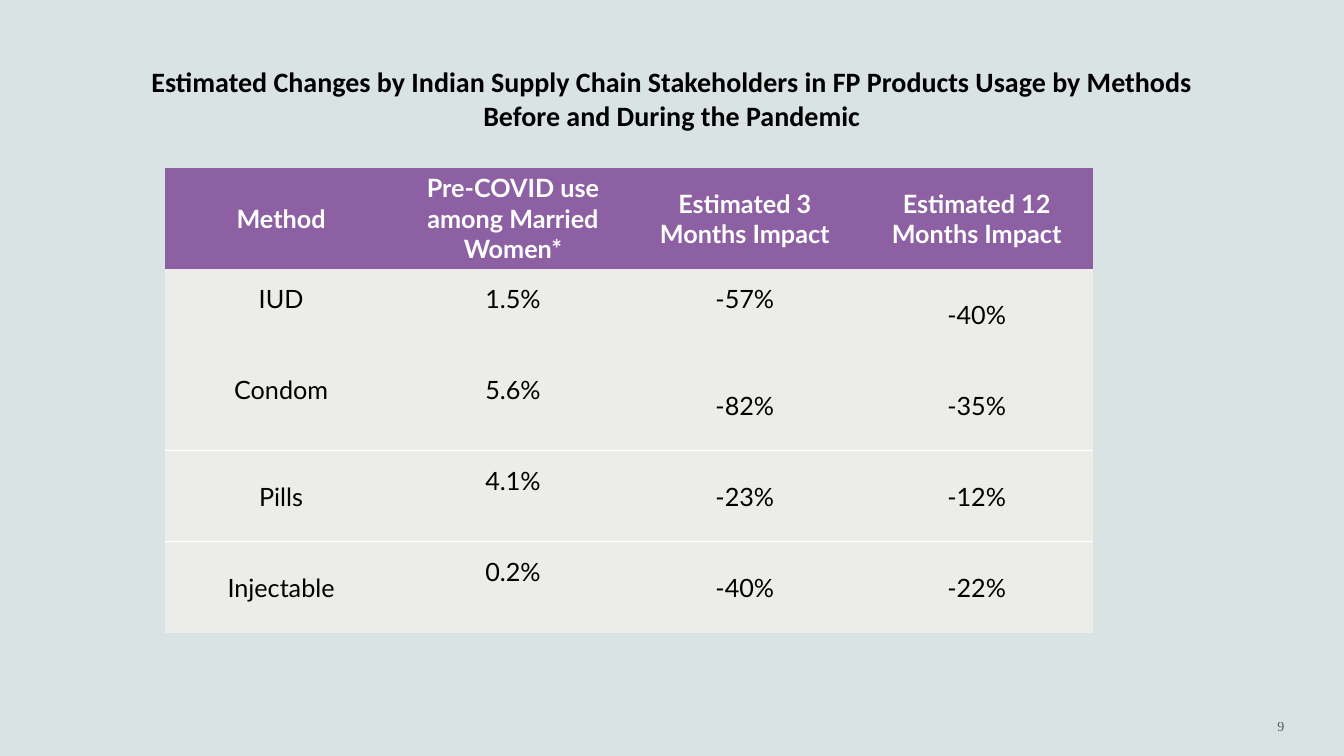
from typing import NamedTuple

from lxml.etree import SubElement
from pptx import Presentation
from pptx.dml.color import RGBColor as Rgb
from pptx.enum.text import MSO_ANCHOR as Anchor, PP_ALIGN as Align
from pptx.oxml import parse_xml
from pptx.oxml.ns import nsdecls, qn
from pptx.util import Pt

COLORS = {
    "back": "DAE3E3",
    "head": "8D5FA3",
    "body": "ECECE8",
    "white": "FFFFFF",
    "black": "000000",
}
PLAIN = "{2D5ABB26-0587-4C30-8999-92F81FD0307C}"  # table style without grid
COL, HEAD, ROW = 165.6, 72, 65
INSET, LIFT = 3.6, 21.6


class Style(NamedTuple):
    font: str
    size: float
    color: str
    bold: bool = False
    align: Align = Align.CENTER


class Box(NamedTuple):
    left: float
    top: float
    width: float
    height: float
    anchor: Anchor
    text: str
    style: Style


class Row(NamedTuple):
    cells: tuple[str, ...]
    raised: tuple[int, ...] = ()  # columns whose text sits above the middle
    ruled: bool = False


TITLE = Box(
    77.8, 38.9, 804.2, 59, Anchor.BOTTOM,
    "Estimated Changes by Indian Supply Chain Stakeholders in FP Products "
    "Usage by Methods Before and During the Pandemic",
    Style("Calibri", 20, "black", True),
)
NUMBER = Box(
    786.2, 500.4, 138.2, 36, Anchor.MIDDLE, "9",
    Style("Times New Roman", 10, "black", align=Align.RIGHT),
)
LABEL = Style("Lato", 18, "white", True)
VALUE = Style("Lato", 18, "black")
ROWS = [
    Row(("Method", "Pre-COVID use among Married Women*",
         "Estimated 3 Months Impact", "Estimated 12 Months Impact")),
    Row(("IUD", "1.5%", "-57%", "-40%"), raised=(0, 1, 2)),
    Row(("Condom", "5.6%", "-82%", "-35%"), raised=(0, 1), ruled=True),
    Row(("Pills", "4.1%", "-23%", "-12%"), raised=(1,), ruled=True),
    Row(("Injectable", "0.2%", "-40%", "-22%"), raised=(1,)),
]


def color(name: str) -> Rgb:
    return Rgb.from_string(COLORS[name])


def write(frame, text: str, style: Style):
    """Fill the frame with one styled paragraph and return it."""
    para = frame.paragraphs[0]
    para.text = text
    para.alignment = style.align
    font = para.font
    font.name, font.size, font.bold = style.font, Pt(style.size), style.bold
    font.color.rgb = color(style.color)
    return para


def add_box(slide, box: Box):
    """Add a text box and return its paragraph."""
    shape = slide.shapes.add_textbox(*map(Pt, box[:4]))
    frame = shape.text_frame
    frame.word_wrap = True
    frame.vertical_anchor = box.anchor
    return write(frame, box.text, box.style)


def fade(para, alpha: int, gap: int) -> None:
    """Set opacity in percent and letter spacing in points."""
    props = para.font._rPr
    props.set("spc", str(gap * 100))
    tint = props.find(".//" + qn("a:srgbClr"))
    SubElement(tint, qn("a:alpha")).set("val", str(alpha * 1000))


def rule(cell) -> None:
    """Draw a white line under the cell."""
    line = parse_xml(
        f'<a:lnB {nsdecls("a")} w="{Pt(1)}"><a:solidFill>'
        f'<a:srgbClr val="{COLORS["white"]}"/></a:solidFill></a:lnB>'
    )
    cell._tc.get_or_add_tcPr().insert(0, line)


def add_grid(slide, left: float, top: float) -> None:
    cols = len(ROWS[0].cells)
    high = HEAD + ROW * (len(ROWS) - 1)
    table = slide.shapes.add_table(
        len(ROWS), cols, Pt(left), Pt(top), Pt(COL * cols), Pt(high)
    ).table
    table.horz_banding = False
    table._tbl.tblPr.find(qn("a:tableStyleId")).text = PLAIN
    for col in table.columns:
        col.width = Pt(COL)
    for r, row in enumerate(ROWS):
        head = r == 0
        table.rows[r].height = Pt(HEAD if head else ROW)
        for c, text in enumerate(row.cells):
            cell = table.cell(r, c)
            cell.fill.solid()
            cell.fill.fore_color.rgb = color("head" if head else "body")
            cell.vertical_anchor = Anchor.MIDDLE
            cell.margin_bottom = Pt(INSET + LIFT * (c in row.raised))
            write(cell.text_frame, text, LABEL if head else VALUE)
            if row.ruled:
                rule(cell)


def main() -> None:
    deck = Presentation()
    deck.slide_width, deck.slide_height = Pt(960), Pt(540)
    slide = deck.slides.add_slide(deck.slide_layouts[6])
    fill = slide.background.fill
    fill.solid()
    fill.fore_color.rgb = color("back")
    add_box(slide, TITLE)
    add_grid(slide, 118, 120)
    fade(add_box(slide, NUMBER), 60, 2)
    deck.save("out.pptx")


if __name__ == "__main__":
    main()
